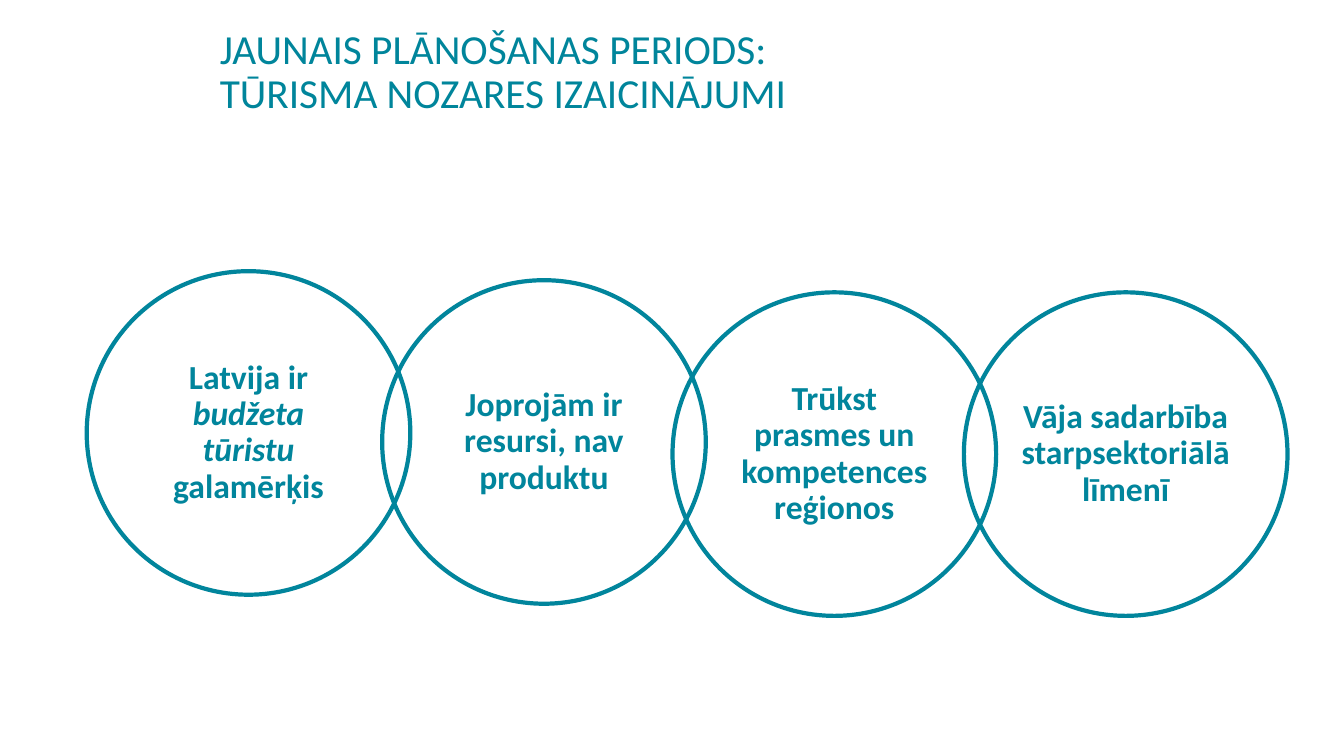
from pptx import Presentation
from pptx.dml.color import RGBColor
from pptx.enum.shapes import MSO_SHAPE
from pptx.enum.text import MSO_ANCHOR, MSO_AUTO_SIZE, PP_ALIGN
from pptx.util import Inches, Pt

OVAL = MSO_SHAPE.OVAL
MIDDLE = MSO_ANCHOR.MIDDLE
FIXED = MSO_AUTO_SIZE.NONE
LEFT, CENTER = PP_ALIGN.LEFT, PP_ALIGN.CENTER

WIDE, HIGH = 13.33, 7.5
SIZE = 3.21
FONT = "Calibri"
TITLE = "JAUNAIS PLĀNOŠANAS PERIODS:\vTŪRISMA NOZARES IZAICINĀJUMI"
RINGS = [
    (0.86, 2.69, [("Latvija ir ", False), ("budžeta tūristu ", True),
                  ("galamērķis", False)]),
    (3.79, 2.78, [("Joprojām ir resursi, nav produktu", False)]),
    (6.67, 2.9, [("Trūkst prasmes un kompetences reģionos", False)]),
    (9.56, 2.9, [("Vāja sadarbība starpsektoriālā līmenī", False)]),
]


def paint(target, color):
    target.rgb = RGBColor.from_string(color)


def style(run, size, color, bold=False, slant=False):
    font = run.font
    font.name, font.size = FONT, Pt(size)
    font.bold, font.italic = bold, slant
    paint(font.color, color)


def set_frame(frame, align):
    frame.word_wrap = True
    frame.auto_size = FIXED
    frame.vertical_anchor = MIDDLE
    para = frame.paragraphs[0]
    para.alignment = align
    para.line_spacing = 0.9
    para.space_before = Pt(0)
    return para


def add_title(slide):
    title = slide.shapes.title
    title.left, title.top = Inches(2.08), Inches(0)
    title.width, title.height = Inches(11.5), Inches(1.45)
    frame = title.text_frame
    frame.text = TITLE
    para = set_frame(frame, LEFT)
    for run in para.runs:
        style(run, 29.5, "00859B")


def add_ring(slide, left, top, parts):
    ring = slide.shapes.add_shape(
        OVAL, Inches(left), Inches(top), Inches(SIZE), Inches(SIZE))
    ring.shadow.inherit = False
    ring.fill.background()
    ring.line.width = Pt(3)
    paint(ring.line.color, "01859C")
    frame = ring.text_frame
    frame.margin_left = frame.margin_right = Inches(0.1)
    frame.margin_top = frame.margin_bottom = Inches(0.1)
    para = set_frame(frame, CENTER)
    for text, slant in parts:
        run = para.add_run()
        run.text = text
        style(run, 24, "01859C", True, slant)


def main():
    deck = Presentation()
    deck.slide_width, deck.slide_height = Inches(WIDE), Inches(HIGH)
    slide = deck.slides.add_slide(deck.slide_layouts[5])
    add_title(slide)
    for left, top, parts in RINGS:
        add_ring(slide, left, top, parts)
    deck.save("out.pptx")


if __name__ == "__main__":
    main()
